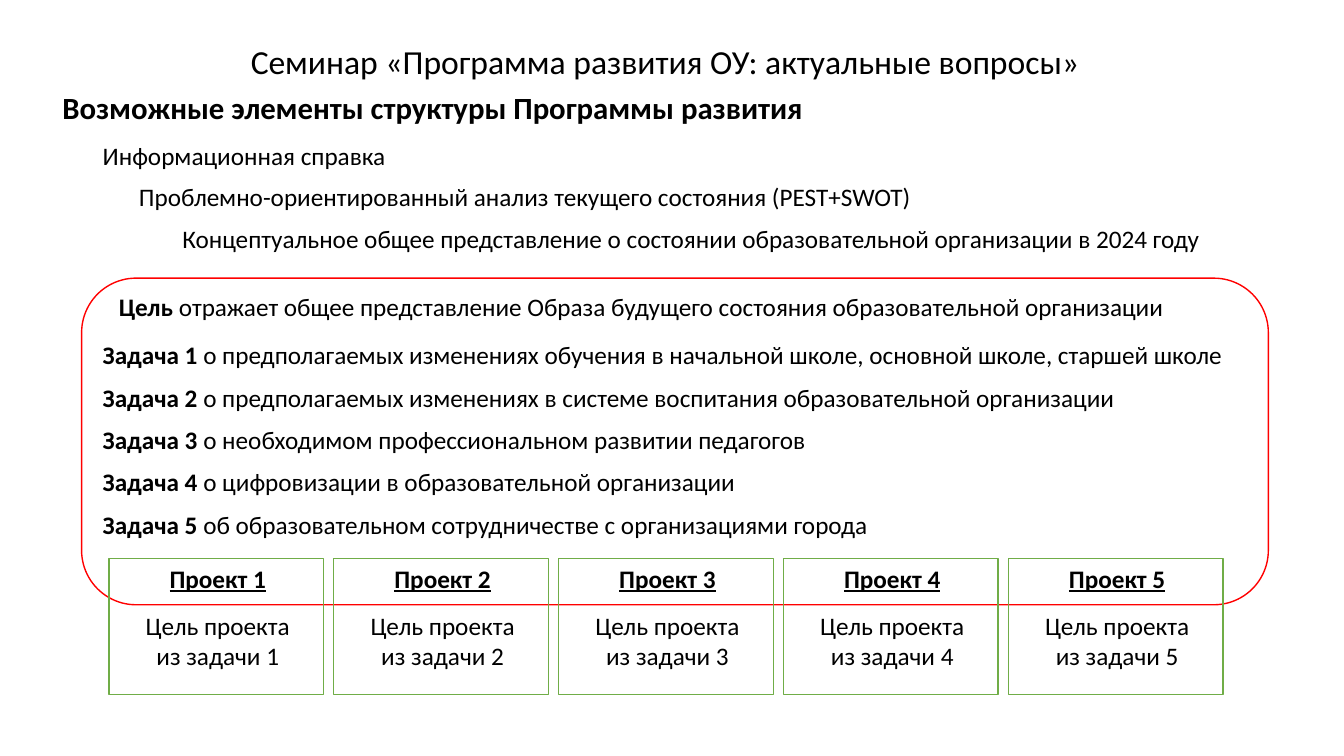
from dataclasses import dataclass

from pptx import Presentation
from pptx.dml.color import RGBColor
from pptx.enum.shapes import MSO_SHAPE as Shape
from pptx.enum.text import MSO_AUTO_SIZE as AutoSize, PP_ALIGN as Align
from pptx.util import Inches, Pt


@dataclass(frozen=True)
class Theme:
    font: str = "Calibri"
    text: RGBColor = RGBColor(0, 0, 0)
    panel: RGBColor = RGBColor(255, 255, 255)
    goal_line: RGBColor = RGBColor(255, 0, 0)
    project_line: RGBColor = RGBColor(0x70, 0xAD, 0x47)
    title_size: Pt = Pt(24)
    heading_size: Pt = Pt(22)
    body_size: Pt = Pt(18)
    line_width: Pt = Pt(1)


THEME = Theme()
BOLD = {"bold": True}
PROJECT_NAME = {"bold": True, "underline": True}

SECTIONS = [
    (0.92, 1.34, 3.23, "Информационная справка"),
    (1.28, 1.75, 10.67, "Проблемно-ориентированный анализ текущего состояния (PEST+SWOT)"),
    (1.71, 2.17, 10.67, "Концептуальное общее представление о состоянии "
                        "образовательной организации в 2024 году"),
]
GOAL = " отражает общее представление Образа будущего состояния образовательной организации"
TASKS = [
    " о предполагаемых изменениях обучения в начальной школе, основной школе, старшей школе",
    " о предполагаемых изменениях в системе воспитания образовательной организации",
    " о необходимом профессиональном развитии педагогов",
    " о цифровизации в образовательной организации",
    " об образовательном сотрудничестве с организациями города",
]
TASK_TOP, TASK_STEP = 3.32, 0.42
PROJECT_LEFT, PROJECT_STEP, PROJECT_TOP = 1.08, 2.23, 5.54


def set_values(target, values):
    for name, value in values.items():
        setattr(target, name, value)


def add_text(shapes, box, paragraphs, size=THEME.body_size, layout=None):
    """Each paragraph is a list of (text, font values) runs."""
    frame = shapes.add_textbox(*map(Inches, box)).text_frame
    set_values(frame, {"word_wrap": True, "auto_size": AutoSize.NONE})
    for index, runs in enumerate(paragraphs):
        paragraph = frame.add_paragraph() if index else frame.paragraphs[0]
        set_values(paragraph, layout or {})
        for text, values in runs:
            run = paragraph.add_run()
            run.text = text
            set_values(run.font, {"name": THEME.font, "size": size, **values})
            run.font.color.rgb = THEME.text
    return frame


def add_frame(shapes, kind, box, line, fill=None):
    shape = shapes.add_shape(kind, *map(Inches, box))
    shape.shadow.inherit = False
    if fill is None:
        shape.fill.background()
    else:
        shape.fill.solid()
        shape.fill.fore_color.rgb = fill
    shape.line.color.rgb = line
    shape.line.width = THEME.line_width


def add_project(slide, index):
    number = index + 1
    left = PROJECT_LEFT + PROJECT_STEP * index
    shapes = slide.shapes.add_group_shape().shapes
    add_frame(shapes, Shape.RECTANGLE, (left, PROJECT_TOP, 2.13, 1.35), THEME.project_line)
    frame = add_text(
        shapes, (left + 0.14, PROJECT_TOP, 1.88, 1.3),
        [[(f"Проект {number}", PROJECT_NAME)], [(f"Цель проекта из задачи {number}", {})]],
        layout={"alignment": Align.CENTER})
    frame.paragraphs[1].space_before = Pt(12)


def main():
    presentation = Presentation()
    set_values(presentation, {"slide_width": Inches(13.33), "slide_height": Inches(7.5)})
    slide = presentation.slides.add_slide(presentation.slide_layouts[6])
    shapes = slide.shapes

    # Title and heading
    add_text(shapes, (0.52, 0.83, 12.53, 6.24),
             [[("Возможные элементы структуры Программы развития", BOLD)]],
             THEME.heading_size, {"alignment": Align.JUSTIFY})
    add_text(shapes, (0.53, 0.4, 12.21, 0.47),
             [[("Семинар «Программа развития ОУ: актуальные вопросы» ", {})]],
             THEME.title_size, {"alignment": Align.CENTER, "line_spacing": 0.9})

    # Opening sections
    for left, top, width, text in SECTIONS:
        add_text(shapes, (left, top, width, 0.4), [[(text, {})]])

    # Goal and tasks
    add_frame(shapes, Shape.ROUNDED_RECTANGLE, (0.81, 2.76, 11.77, 3.24),
              THEME.goal_line, THEME.panel)
    add_text(shapes, (1.08, 2.84, 11.11, 0.4), [[("Цель", BOLD), (GOAL, {})]])
    for index, task in enumerate(TASKS):
        add_text(shapes, (0.92, TASK_TOP + TASK_STEP * index, 11.65, 0.4),
                 [[(f"Задача {index + 1}", BOLD), (task, {})]])

    # One project for each task
    for index in range(len(TASKS)):
        add_project(slide, index)

    presentation.save("out.pptx")


if __name__ == "__main__":
    main()
